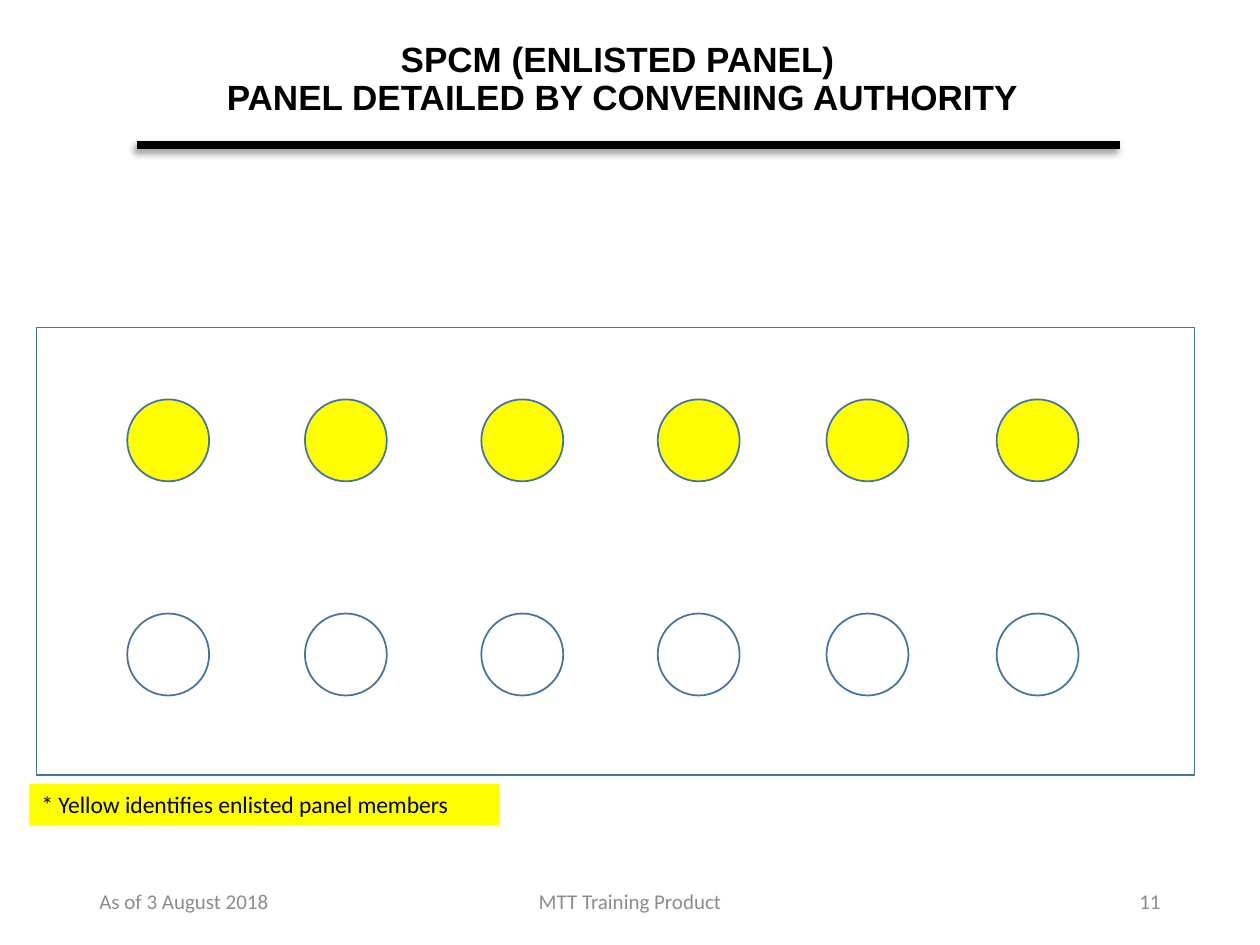
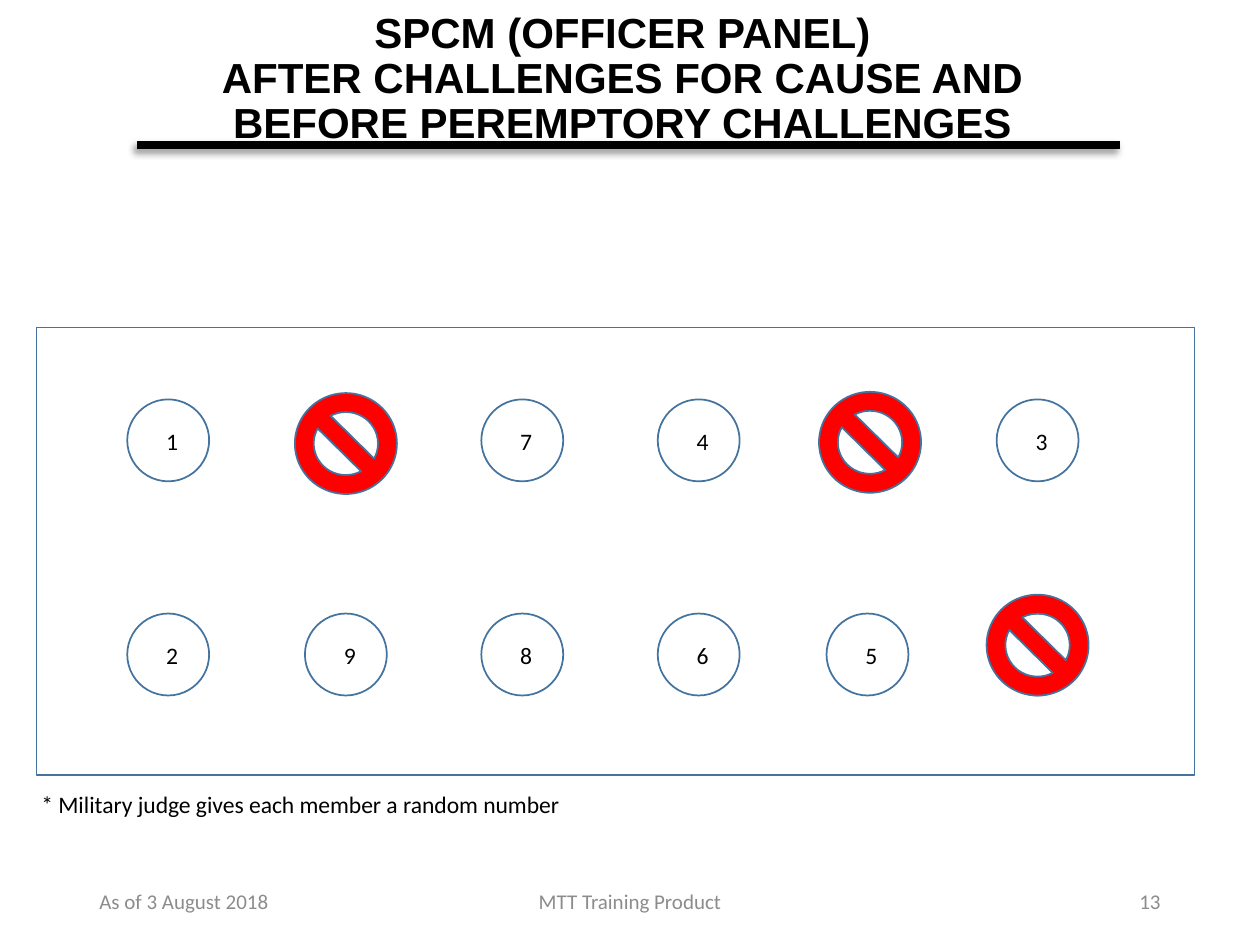
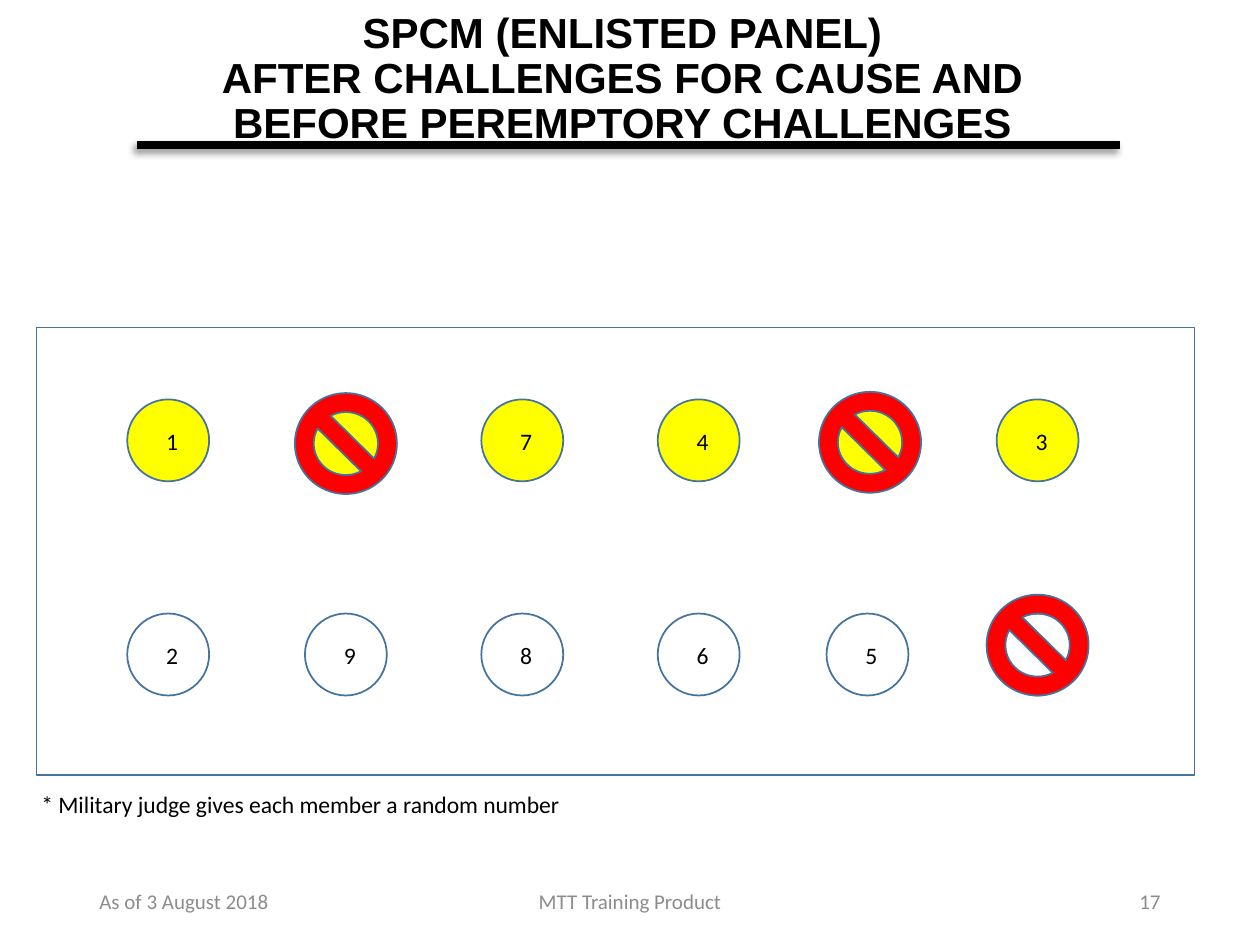
from dataclasses import dataclass
from typing import NamedTuple, Optional

from lxml import etree
from pptx import Presentation
from pptx import util as u
from pptx.dml.color import RGBColor
from pptx.enum import shapes, text
from pptx.oxml import ns

COLORS = {
    "ink": "000000",
    "outline": "43739E",
    "enlisted": "FFFF00",
    "officer": "FFFFFF",
    "struck": "FF0000",
    "footer": "8C8C8C",
}
SLIDE_WIDTH, SLIDE_HEIGHT = u.Inches(10), u.Inches(7.5)
ALIGN = text.PP_ALIGN
SHAPE = shapes.MSO_SHAPE


class Frame(NamedTuple):
    """A rectangle in percent of the slide's width and height."""

    left: float
    top: float
    width: float
    height: float

    def lengths(self) -> tuple[int, int, int, int]:
        """Return the rectangle in slide units."""
        return (across(self.left), down(self.top),
                across(self.width), down(self.height))


class Style(NamedTuple):
    """The look of a piece of text."""

    size: float
    color: str = "ink"
    font: str = "Calibri"
    bold: bool = False
    align: ALIGN = ALIGN.LEFT
    anchor: text.MSO_ANCHOR = text.MSO_ANCHOR.TOP


@dataclass(frozen=True)
class Panel:
    """One slide showing the seats of a court-martial panel."""

    title: str
    title_size: int
    number: str
    note: str
    note_width: float
    front_fill: str
    note_fill: Optional[str] = None
    challenged: bool = True


TITLE_FRAME = Frame(10.4, 3.07, 78, 10.8)
RULE_START, RULE_END, RULE_TOP = 10.9, 88.9, 15.33
PANEL_FRAME = Frame(2.9, 34.67, 91.9, 47.33)
SEAT_COLUMNS = (10.1, 24.2, 38.2, 52.2, 65.6, 79.1)
SEAT_ROWS = (42.27, 64.93)
SEAT_WIDTH, SEAT_HEIGHT = 6.5, 8.67
SEAT_NUMBERS = ("1 74 3", "29865 ")
STRUCK_SEATS = ((65, 41.47), (23.4, 41.6), (78.3, 62.93))
NOTE_STYLE = Style(13.5)
AFTER_CAUSE = "AFTER CHALLENGES FOR CAUSE AND BEFORE PEREMPTORY CHALLENGES"
RANDOM_NOTE = "* Military judge gives each member a random number"

PANELS = (
    Panel("SPCM (ENLISTED PANEL) \vPANEL DETAILED BY CONVENING AUTHORITY", 20, "11",
          "* Yellow identifies enlisted panel members", 37.3, "enlisted",
          note_fill="enlisted", challenged=False),
    Panel(f"SPCM (OFFICER PANEL)\v{AFTER_CAUSE}", 24, "13",
          RANDOM_NOTE, 46.9, "officer"),
    Panel(f"SPCM (ENLISTED PANEL)\v{AFTER_CAUSE}", 24, "17",
          RANDOM_NOTE, 46.9, "enlisted"),
)


def across(percent: float) -> int:
    """Convert a share of the slide's width to a length."""
    return round(SLIDE_WIDTH * percent / 100)


def down(percent: float) -> int:
    """Convert a share of the slide's height to a length."""
    return round(SLIDE_HEIGHT * percent / 100)


def paint(fill, color: Optional[str]) -> None:
    """Fill with a named color, or clear the fill."""
    if color is None:
        fill.background()
    else:
        fill.solid()
        fill.fore_color.rgb = RGBColor.from_string(COLORS[color])


def write(box, words: str, style: Style) -> None:
    """Put styled text into a box."""
    frame = box.text_frame
    frame.text = words
    frame.word_wrap = True
    frame.auto_size = text.MSO_AUTO_SIZE.NONE
    frame.vertical_anchor = style.anchor
    para = frame.paragraphs[0]
    para.alignment = style.align
    for span in para.runs:
        span.font.name = style.font
        span.font.size = u.Pt(style.size)
        span.font.bold = style.bold
        span.font.color.rgb = RGBColor.from_string(COLORS[style.color])


def add_text(page, area: Frame, words: str, style: Style,
             fill: Optional[str] = None) -> None:
    """Add a text box with an optional fill."""
    box = page.shapes.add_textbox(*area.lengths())
    paint(box.fill, fill)
    write(box, words, style)


def add_outlined(page, kind: SHAPE, area: Frame, fill: Optional[str] = None) -> None:
    """Add a preset shape with the shared outline."""
    shape = page.shapes.add_shape(kind, *area.lengths())
    shape.shadow.inherit = False
    paint(shape.fill, fill)
    paint(shape.line.fill, "outline")
    shape.line.width = u.Pt(1)


def add_title(page, panel: Panel) -> None:
    """Format the title and lay the shadowed rule behind it."""
    title = page.shapes.title
    title.left, title.top, title.width, title.height = TITLE_FRAME.lengths()
    write(title, panel.title,
          Style(panel.title_size, font="Arial", bold=True,
                align=ALIGN.CENTER, anchor=text.MSO_ANCHOR.MIDDLE))
    title.text_frame.paragraphs[0].line_spacing = 0.9

    rule = page.shapes.add_connector(
        shapes.MSO_CONNECTOR.STRAIGHT, across(RULE_START), down(RULE_TOP),
        across(RULE_END), down(RULE_TOP))
    paint(rule.line.fill, "ink")
    rule.line.width = u.Pt(4.25)
    effects = etree.SubElement(rule.element.spPr, ns.qn("a:effectLst"))
    shadow = etree.SubElement(
        effects, ns.qn("a:outerShdw"), blurRad=str(u.Pt(4)), dist=str(u.Pt(3)),
        dir=str(135 * 60000), algn="tr", rotWithShape="0")
    color = etree.SubElement(shadow, ns.qn("a:srgbClr"), val=COLORS["ink"])
    etree.SubElement(color, ns.qn("a:alpha"), val="40000")
    title.element.addprevious(rule.element)


def add_seats(page, panel: Panel) -> None:
    """Draw the panel box, its two rows of seats and the struck members."""
    add_outlined(page, SHAPE.RECTANGLE, PANEL_FRAME)
    for top, numbers, fill in zip(SEAT_ROWS, SEAT_NUMBERS, (panel.front_fill, None)):
        for left, number in zip(SEAT_COLUMNS, numbers):
            add_outlined(page, SHAPE.OVAL,
                         Frame(left, top, SEAT_WIDTH, SEAT_HEIGHT), fill)
            if panel.challenged and number.strip():
                add_text(page, Frame(left + 2.1, top + 2.27, 3.1, 4.4),
                         number, NOTE_STYLE)
    if panel.challenged:
        for left, top in STRUCK_SEATS:
            add_outlined(page, SHAPE.NO_SYMBOL, Frame(left, top, 8.1, 10.67), "struck")


def add_footer(page, number: str) -> None:
    """Add the date, the product name and the slide number."""
    for left, width, words, align in (
        (33.1, 33.8, "MTT Training Product", ALIGN.CENTER),
        (70.6, 22.5, number, ALIGN.RIGHT),
        (6.9, 22.5, "As of 3 August 2018", ALIGN.LEFT),
    ):
        add_text(page, Frame(left, 92.67, width, 5.33), words,
                 Style(12, "footer", align=align, anchor=text.MSO_ANCHOR.MIDDLE))


def main() -> None:
    """Build the deck."""
    deck = Presentation()
    deck.slide_width, deck.slide_height = SLIDE_WIDTH, SLIDE_HEIGHT
    title_only = deck.slide_layouts.get_by_name("Title Only")
    for panel in PANELS:
        page = deck.slides.add_slide(title_only)
        add_title(page, panel)
        add_seats(page, panel)
        add_text(page, Frame(2.3, 82.93, panel.note_width, 4.4),
                 panel.note, NOTE_STYLE, panel.note_fill)
        add_footer(page, panel.number)
    deck.save("out.pptx")


if __name__ == "__main__":
    main()
